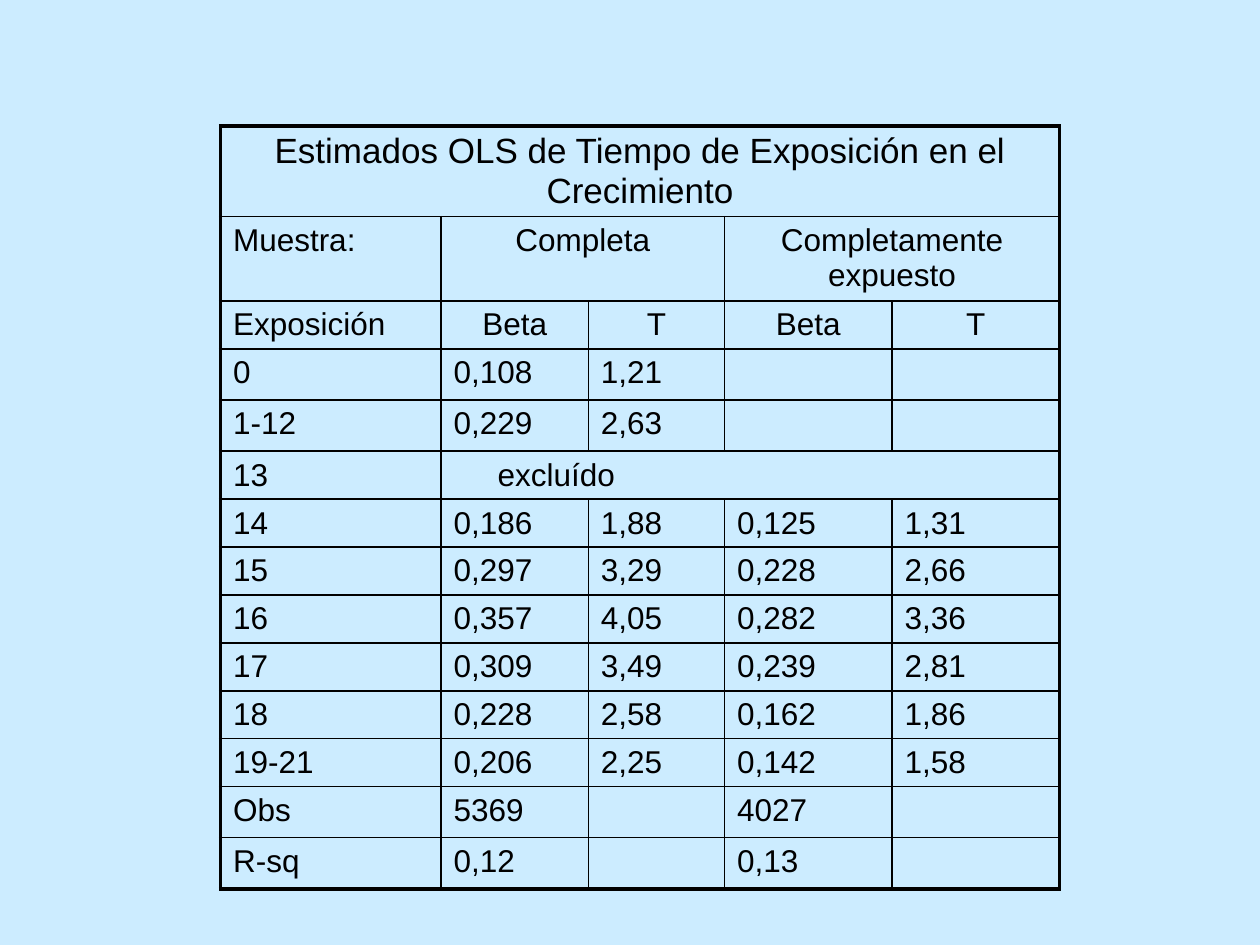
from lxml.etree import SubElement as Sub
from pptx import Presentation
from pptx.dml.color import RGBColor as RGB
from pptx.enum.text import PP_ALIGN as Align
from pptx.oxml.ns import qn
from pptx.util import Inches as In, Pt

# Content: None marks a place covered by the merged cell to its left
ROWS = [
    ("Estimados OLS de Tiempo de Exposición en el Crecimiento", None, None, None, None),
    ("Muestra:", "Completa", None, "Completamente expuesto", None),
    ("Exposición", "Beta", "T", "Beta", "T"),
    ("0", "0,108", "1,21", "", ""),
    ("1-12", "0,229", "2,63", "", ""),
    ("13", "excluído", None, None, None),
    ("14", "0,186", "1,88", "0,125", "1,31"),
    ("15", "0,297", "3,29", "0,228", "2,66"),
    ("16", "0,357", "4,05", "0,282", "3,36"),
    ("17", "0,309", "3,49", "0,239", "2,81"),
    ("18", "0,228", "2,58", "0,162", "1,86"),
    ("19-21", "0,206", "2,25", "0,142", "1,58"),
    ("Obs", "5369", "", "4027", ""),
    ("R-sq", "0,12", "", "0,13", ""),
]
HEAD = 3  # rows with centred headings
WIDTHS = [1.75, 1.17, 1.08, 1.33, 1.33]
HEIGHTS = [0.71, 0.67] + [0.38] * (len(ROWS) - 2)
LEFT, TOP = 1.75, 1
INDENT = 0.45

THEME = {
    "back": "CCECFF", "ink": "000000", "font": "Arial",
    "title": 20, "body": 18, "thin": 1, "thick": 2.25,
}


def rule(cell, sides):
    """Draw the four borders; sides maps each tag to True on the outer edge."""
    props = cell._tc.get_or_add_tcPr()
    for tag, outer in sides.items():
        size = THEME["thick" if outer else "thin"]
        line = Sub(props, qn(f"a:{tag}"), w=str(Pt(size)))
        fill = Sub(line, qn("a:solidFill"))
        Sub(fill, qn("a:srgbClr"), val=THEME["ink"])


def write(cell, text, size, align):
    cell.text_frame.text = text
    para = cell.text_frame.paragraphs[0]
    para.alignment = align
    para.font.size = Pt(size)
    for run in para.runs:
        run.font.size = Pt(size)
        run.font.name = THEME["font"]
        run.font.color.rgb = RGB.from_string(THEME["ink"])


# Slide
deck = Presentation()
deck.slide_width, deck.slide_height = In(10), In(7.5)
slide = deck.slides.add_slide(deck.slide_layouts[6])
slide.background.fill.solid()
slide.background.fill.fore_color.rgb = RGB.from_string(THEME["back"])

# Table grid
rows, cols = len(ROWS), len(WIDTHS)
table = slide.shapes.add_table(
    rows, cols, In(LEFT), In(TOP), In(sum(WIDTHS)), In(sum(HEIGHTS))).table
table.first_row = table.horz_banding = False
for col, width in zip(table.columns, WIDTHS):
    col.width = In(width)
for row, height in zip(table.rows, HEIGHTS):
    row.height = In(height)

# Cells
for r, row in enumerate(ROWS):
    for c, text in enumerate(row):
        cell = table.cell(r, c)
        end = c
        if text is not None:
            while end + 1 < cols and row[end + 1] is None:
                end += 1
            if end > c:
                cell.merge(table.cell(r, end))
            heading = r == 0 or (r < HEAD and c > 0)
            write(cell, text, THEME["title" if r == 0 else "body"],
                  Align.CENTER if heading else Align.LEFT)
            if end > c and not heading:
                cell.margin_left = In(INDENT)
        rule(cell, {"lnL": c == 0, "lnR": end == cols - 1,
                    "lnT": r == 0, "lnB": r == rows - 1})
        cell.fill.background()

deck.save("out.pptx")
